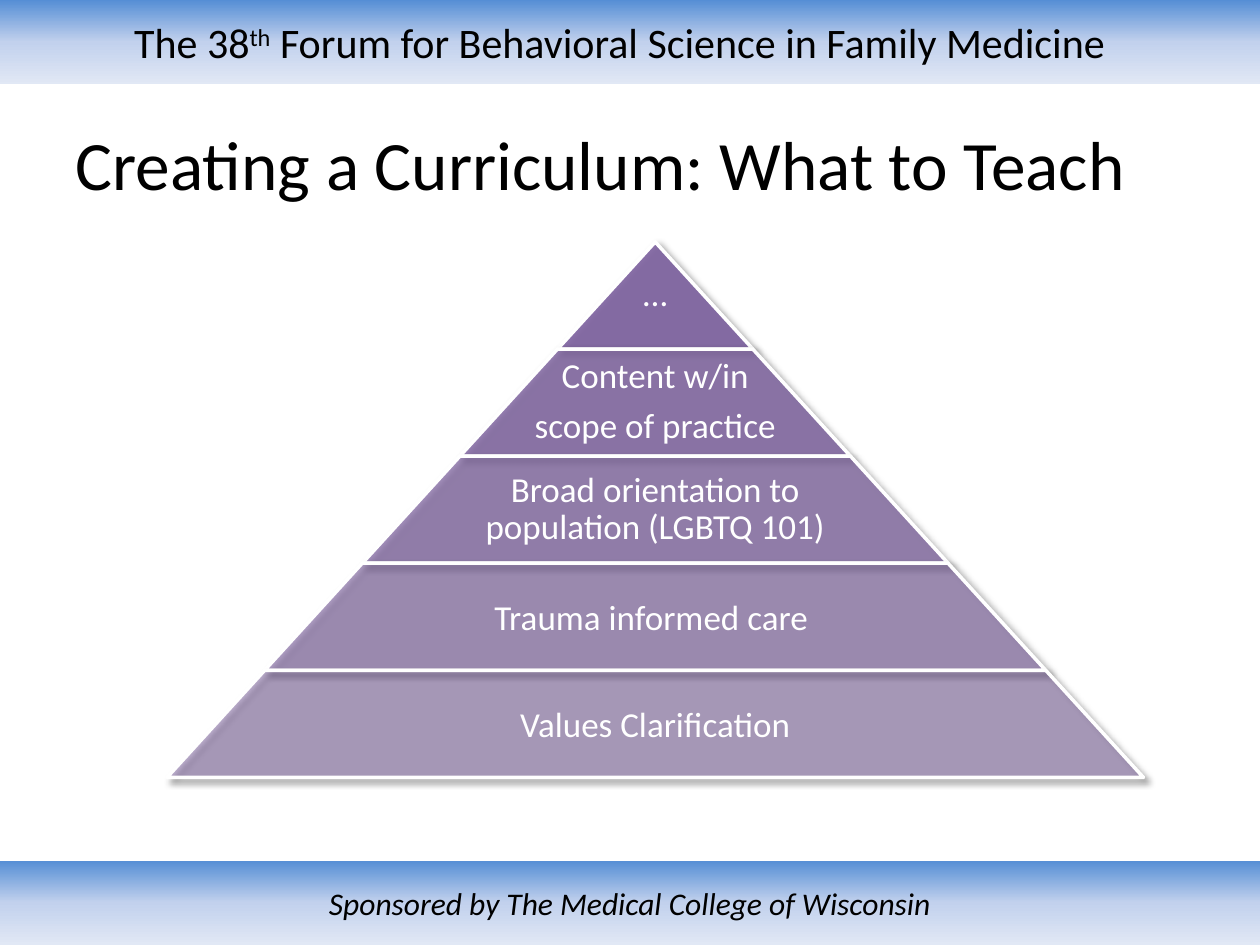
from copy import deepcopy

from lxml.etree import SubElement
from pptx import Presentation
from pptx.dml.color import RGBColor
from pptx.enum.shapes import MSO_SHAPE
from pptx.enum.text import MSO_ANCHOR, PP_ALIGN
from pptx.oxml.ns import qn
from pptx.util import Inches, Pt

FONT = "Calibri"
BLACK, WHITE, PURPLE = "000000", "FFFFFF", "8064A2"
BAR_STOPS = [(0, "558ED5"), (0.5, "C2D1ED"), (1, "E1E8F5")]
BAR_HEIGHT = 0.67

# Pyramid geometry in inches
CENTER, TOP = 5.2, 1.92
LEVEL_HEIGHT, LEVEL_WIDTH_STEP = 0.85, 1.55
TEXT_SHARE = 0.65

# Paragraphs of each level from the top, and whether they are set tightly
LEVELS = [
    (["…"], True),
    (["Content w/in", "scope of practice"], True),
    (["Broad orientation to population (LGBTQ 101)"], True),
    (["Trauma informed care "], False),
    (["Values Clarification"], False),
]


def color(value):
    return RGBColor.from_string(value)


def add_run(paragraph, text, size, ink, italic=False):
    run = paragraph.add_run()
    run.text = text
    run.font.name = FONT
    run.font.size = Pt(size)
    run.font.italic = italic
    run.font.color.rgb = color(ink)
    return run


def add_bar(slide, top):
    """Add a full-width gradient bar and return its centred paragraph."""
    bar = slide.shapes.add_shape(
        MSO_SHAPE.RECTANGLE, 0, Inches(top), Inches(10), Inches(BAR_HEIGHT))
    bar.shadow.inherit = False
    bar.line.fill.background()
    bar.fill.gradient()
    bar.fill.gradient_angle = 270
    stop_list = bar._element.spPr.find(qn("a:gradFill")).find(qn("a:gsLst"))
    stop_list.append(deepcopy(stop_list[-1]))
    for stop, (position, value) in zip(bar.fill.gradient_stops, BAR_STOPS):
        stop.position = position
        stop.color.rgb = color(value)
    bar.text_frame.vertical_anchor = MSO_ANCHOR.MIDDLE
    paragraph = bar.text_frame.paragraphs[0]
    paragraph.alignment = PP_ALIGN.CENTER
    return bar, paragraph


def add_header(slide):
    bar, paragraph = add_bar(slide, 0)
    bar.text_frame.margin_right = Inches(0.26)
    add_run(paragraph, "The 38", 24, BLACK)
    ordinal = add_run(paragraph, "th", 24, BLACK)
    ordinal.font._element.set("baseline", "30000")
    add_run(paragraph, " Forum for Behavioral Science in Family Medicine", 24, BLACK)


def add_footer(slide):
    _, paragraph = add_bar(slide, 7.5 - BAR_HEIGHT)
    add_run(paragraph, "Sponsored by The Medical College of Wisconsin", 18, BLACK, True)


def set_title(slide, text):
    title = slide.shapes.title
    title.left, title.top = Inches(0.5), Inches(0.92)
    title.width, title.height = Inches(9), Inches(0.75)
    title.text_frame.vertical_anchor = MSO_ANCHOR.MIDDLE
    paragraph = title.text_frame.paragraphs[0]
    paragraph.alignment = PP_ALIGN.LEFT
    add_run(paragraph, text, 39.6, BLACK)


def add_alpha(color_element, percent):
    SubElement(color_element, qn("a:alpha"), val=str(percent * 1000))


def add_shadow(shape):
    shape.shadow.inherit = False
    effects = shape._element.spPr.find(qn("a:effectLst"))
    shadow = SubElement(
        effects, qn("a:outerShdw"), blurRad=str(Pt(4)), dist=str(Pt(3)),
        dir=str(45 * 60000), algn="tl", rotWithShape="0")
    add_alpha(SubElement(shadow, qn("a:srgbClr"), val=BLACK), 40)


def add_band(group, top, width, opacity):
    band = group.shapes.add_shape(
        MSO_SHAPE.TRAPEZOID, Inches(CENTER - width / 2), Inches(top),
        Inches(width), Inches(LEVEL_HEIGHT))
    band.adjustments[0] = LEVEL_WIDTH_STEP / 2 / LEVEL_HEIGHT
    band.fill.solid()
    band.fill.fore_color.rgb = color(PURPLE)
    add_alpha(band._element.spPr.find(qn("a:solidFill"))[0], opacity)
    band.line.color.rgb = color(WHITE)
    band.line.width = Pt(2)
    add_shadow(band)


def add_label(group, top, width, lines, tight):
    box = group.shapes.add_textbox(
        Inches(CENTER - width / 2), Inches(top), Inches(width), Inches(LEVEL_HEIGHT))
    frame = box.text_frame
    frame.word_wrap = True
    frame.vertical_anchor = MSO_ANCHOR.MIDDLE
    frame.margin_left = frame.margin_right = Inches(0.03)
    frame.margin_top = frame.margin_bottom = Inches(0.03)
    for index, line in enumerate(lines):
        paragraph = frame.add_paragraph() if index else frame.paragraphs[0]
        paragraph.alignment = PP_ALIGN.CENTER
        if tight:
            paragraph.line_spacing = 0.9
            paragraph.space_after = Pt(7)
        add_run(paragraph, line, 20, WHITE)


def add_pyramid(slide):
    group = slide.shapes.add_group_shape()
    for index, (lines, tight) in enumerate(LEVELS):
        top = TOP + index * LEVEL_HEIGHT
        width = (index + 1) * LEVEL_WIDTH_STEP
        add_band(group, top, width, 90 - 10 * index)
        add_label(group, top, width * TEXT_SHARE if index else width, lines, tight)


def main():
    presentation = Presentation()
    presentation.slide_width, presentation.slide_height = Inches(10), Inches(7.5)
    slide = presentation.slides.add_slide(presentation.slide_layouts[5])

    # Bars at the top and bottom edges
    add_header(slide)
    add_footer(slide)

    # Title and pyramid
    set_title(slide, "Creating a Curriculum: What to Teach")
    add_pyramid(slide)

    presentation.save("out.pptx")


if __name__ == "__main__":
    main()
